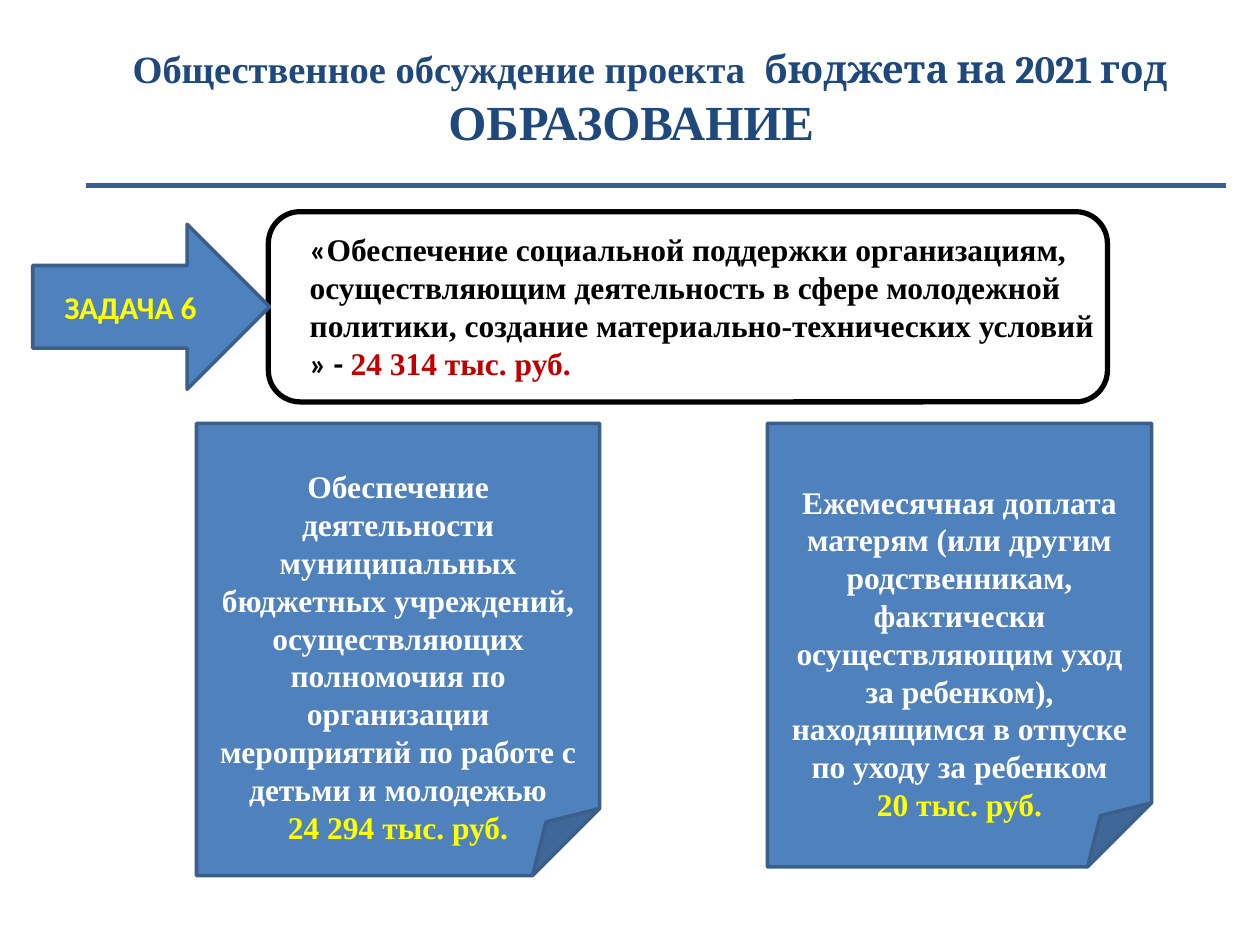
"""Builds the education budget slide: title, task banner and two spending cards."""
from lxml import etree
from pptx import Presentation
from pptx.dml.color import RGBColor
from pptx.enum.shapes import MSO_CONNECTOR, MSO_SHAPE
from pptx.enum.text import MSO_ANCHOR, PP_ALIGN
from pptx.oxml.ns import qn
from pptx.util import Inches, Pt

ROUNDED, ARROW, FOLDED = MSO_SHAPE.ROUNDED_RECTANGLE, MSO_SHAPE.RIGHT_ARROW, MSO_SHAPE.FOLDED_CORNER
STRAIGHT = MSO_CONNECTOR.STRAIGHT
TOP, MIDDLE = MSO_ANCHOR.TOP, MSO_ANCHOR.MIDDLE
LEFT, CENTER = PP_ALIGN.LEFT, PP_ALIGN.CENTER

SERIF, SANS, HEAD = "Times New Roman", "Calibri", "Cambria"
BLACK, WHITE, YELLOW, RED, NAVY = "000000", "FFFFFF", "FFFF00", "C00000", "1F497D"
BLUE, EDGE, RULE = "4F81BD", "3A5F8C", "376092"

TITLE = [
    ("Общественное обсуждение проекта  ", SERIF, 22, NAVY),
    ("бюджета на 2021 год ", HEAD, 22, NAVY),
    ("ОБРАЗОВАНИЕ", SERIF, 28, NAVY),
]
TASK = [("ЗАДАЧА 6", SANS, 18, YELLOW)]
GOAL = [
    ("«", SANS, 18, BLACK),
    ("Обеспечение социальной поддержки организациям, осуществляющим деятельность "
     "в сфере молодежной политики, создание материально-технических условий ", SERIF, 18, BLACK),
    ("» - ", SANS, 18, BLACK),
    ("24 314 тыс. руб.", SERIF, 18, RED),
]
CARDS = [
    ((1.56, 3.36, 3.2, 3.59), 0.35,
     "Обеспечение деятельности муниципальных бюджетных учреждений, осуществляющих "
     "полномочия по организации мероприятий по работе с детьми и молодежью",
     "24 294 тыс. руб."),
    ((6.09, 3.36, 3.05, 3.52), 0.47,
     "Ежемесячная доплата матерям (или другим родственникам, фактически "
     "осуществляющим уход за ребенком), находящимся в отпуске по уходу за ребенком",
     "20 тыс. руб."),
]


def rgb(value):
    """Turn a hex string into a colour."""
    return RGBColor.from_string(value)


def add_box(s, kind, box, fill, line, width):
    """Add a preset shape with the given fill and outline."""
    sp = s.shapes.add_shape(kind, *map(Inches, box))
    sp.shadow.inherit = False
    if fill:
        sp.fill.solid()
        sp.fill.fore_color.rgb = rgb(fill)
    else:
        sp.fill.background()
    sp.line.color.rgb = rgb(line)
    sp.line.width = Pt(width)
    return sp


def write(sp, paragraphs, align=CENTER, anchor=MIDDLE):
    """Fill a shape with paragraphs of bold runs."""
    tf = sp.text_frame
    tf.word_wrap = True
    tf.vertical_anchor = anchor
    for i, runs in enumerate(paragraphs):
        p = tf.add_paragraph() if i else tf.paragraphs[0]
        p.alignment = align
        for text, font, size, color in runs:
            r = p.add_run()
            r.text = text
            r.font.name, r.font.size, r.font.bold = font, Pt(size), True
            r.font.color.rgb = rgb(color)
    return tf


def main():
    """Build and save the slide."""
    prs = Presentation()
    prs.slide_width, prs.slide_height = Inches(10), Inches(7.5)
    s = prs.slides.add_slide(prs.slide_layouts[5])

    title = s.shapes.title
    title.left, title.top, title.width, title.height = map(Inches, (0.51, 0.17, 9, 1.21))
    tf = write(title, [TITLE])
    tf.paragraphs[0]._p.get_or_add_pPr().set("indent", str(Inches(0.3)))

    rule = s.shapes.add_connector(STRAIGHT, *map(Inches, (0.68, 1.47, 9.73, 1.47)))
    rule.line.color.rgb = rgb(RULE)
    rule.line.width = Pt(3)
    etree.SubElement(rule._element.spPr, qn("a:effectLst"))

    add_box(s, ROUNDED, (2.13, 1.68, 6.66, 1.51), None, BLACK, 3)
    goal = s.shapes.add_textbox(*map(Inches, (2.36, 1.78, 6.43, 1.31)))
    write(goal, [GOAL], LEFT, TOP)

    write(add_box(s, ARROW, (0.26, 1.78, 1.88, 1.31), BLUE, EDGE, 2), [TASK])

    for box, inset, purpose, amount in CARDS:
        card = add_box(s, FOLDED, box, BLUE, EDGE, 2)
        lines = [[(purpose, SERIF, 18, WHITE)], [(amount, SERIF, 18, YELLOW)]]
        tf = write(card, lines, anchor=TOP)
        tf.margin_top, tf.margin_bottom = Inches(inset), 0

    prs.save("out.pptx")


if __name__ == "__main__":
    main()
